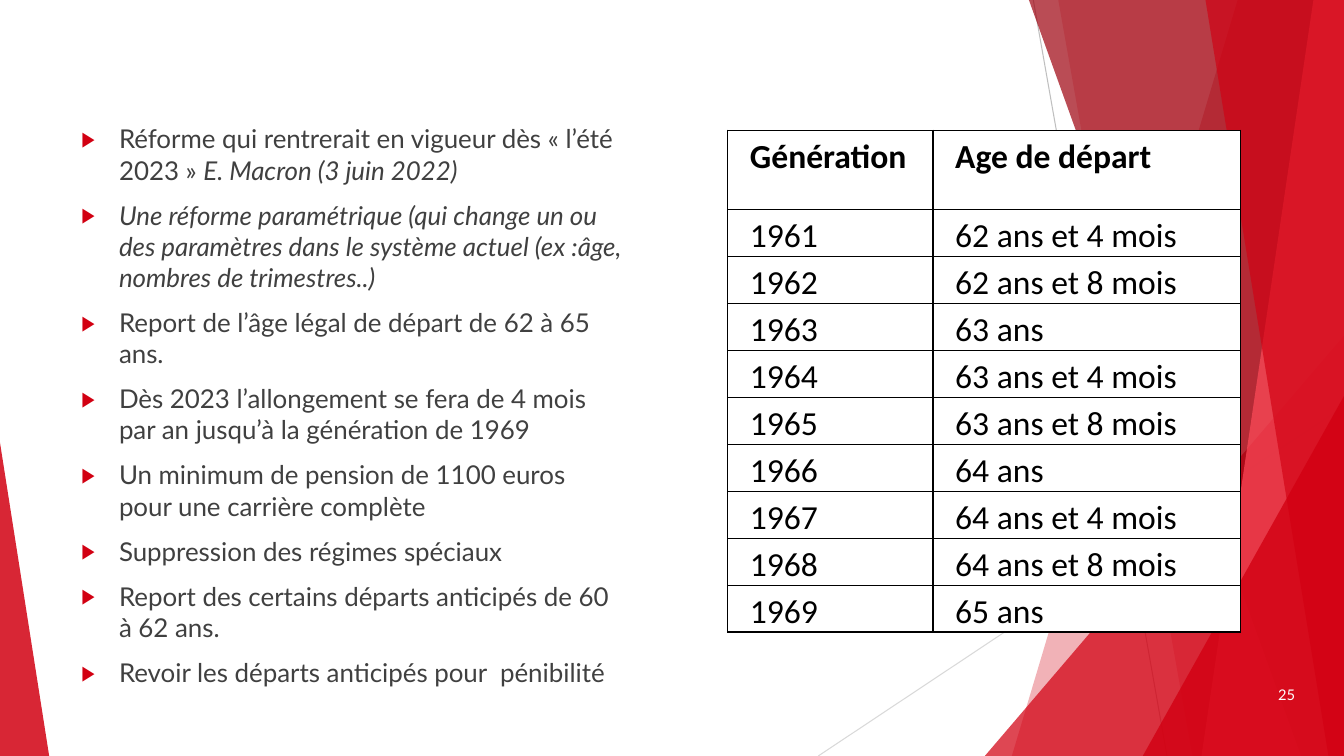
from collections import namedtuple

from lxml.etree import SubElement
from pptx import Presentation
from pptx.dml.color import RGBColor
from pptx.enum.shapes import MSO_CONNECTOR, MSO_SHAPE
from pptx.enum.text import MSO_ANCHOR, PP_ALIGN
from pptx.oxml.ns import qn
from pptx.util import Cm, Pt

Box = namedtuple("Box", "left top width height")

COLORS = {
    "red": "D20012",
    "dark_red": "9E000D",
    "light_red": "FF4B5A",
    "grey": "BFBFBF",
    "light_grey": "D9D9D9",
    "text": "404040",
    "black": "000000",
    "white": "FFFFFF",
}

BULLETS = [
    [("Réforme qui rentrerait en vigueur dès « l’été 2023 » ", False),
     ("E. Macron (3 juin 2022)", True)],
    [("Une réforme paramétrique (qui change un ou des paramètres dans le "
      "système actuel (ex :âge, nombres de trimestres..)", True)],
    [("Report de l’âge légal de départ de 62 à 65 ans.", False)],
    [("Dès 2023 l’allongement se fera de 4 mois par an jusqu’à la "
      "génération de 1969", False)],
    [("Un minimum de pension de 1100 euros pour une carrière complète", False)],
    [("Suppression des régimes spéciaux", False)],
    [("Report des certains départs anticipés de 60 à 62 ans.", False)],
    [("Revoir les départs anticipés pour  pénibilité", False)],
]

AGES = [
    ("Génération", "Age de départ"),
    ("1961", "62 ans et 4 mois"),
    ("1962", "62 ans et 8 mois"),
    ("1963", "63 ans"),
    ("1964", "63 ans et 4 mois"),
    ("1965", "63 ans et 8 mois"),
    ("1966", "64 ans"),
    ("1967", "64 ans et 4 mois"),
    ("1968", "64 ans et 8 mois"),
    ("1969", "65 ans"),
]


def rgb(name):
    return RGBColor.from_string(COLORS[name])


def lengths(box):
    return [Cm(value) for value in box]


def add_span(para, text, *, size, color, font="Lato", bold=False, italic=False):
    span = para.add_run()
    span.text = text
    span.font.name = font
    span.font.size = Pt(size)
    span.font.bold = bold
    span.font.italic = italic
    span.font.color.rgb = rgb(color)


def paint(shape, color, opacity):
    shape.shadow.inherit = False
    shape.line.fill.background()
    shape.fill.solid()
    shape.fill.fore_color.rgb = rgb(color)
    tint = shape.fill._xPr.find(".//" + qn("a:srgbClr"))
    SubElement(tint, qn("a:alpha"), val=str(opacity * 1000))


def add_ray(page, start, end, color):
    ray = page.shapes.add_connector(
        MSO_CONNECTOR.STRAIGHT, *lengths(start), *lengths(end))
    ray.line.color.rgb = rgb(color)
    ray.line.width = Pt(0.75)
    SubElement(ray._element.spPr, qn("a:effectLst"))


def add_band(page, box, top_x, bottom_x, color, opacity):
    right, bottom = box.left + box.width, box.top + box.height
    outline = page.shapes.build_freeform(Cm(top_x), Cm(box.top))
    outline.add_line_segments([
        lengths((right, box.top)),
        lengths((right, bottom)),
        lengths((bottom_x, bottom)),
    ], close=True)
    paint(outline.convert_to_shape(), color, opacity)


def add_corner(page, box, apex, opacity):
    corner = page.shapes.add_shape(MSO_SHAPE.ISOSCELES_TRIANGLE, *lengths(box))
    corner.adjustments[0] = apex
    paint(corner, "red", opacity)


def add_right_corner(page, box, width, height, opacity):
    left = box.left + box.width - width
    top = box.top + box.height - height
    add_corner(page, Box(left, top, width, height), 1, opacity)


def add_backdrop(page, box):
    right, bottom = box.left + box.width, box.top + box.height
    add_ray(page, (26.04, box.top), (29.41, bottom), "grey")
    add_ray(page, (right, 10.24), (20.62, bottom), "light_grey")
    add_band(page, box, 31.19, 25.5, "red", 30)
    add_band(page, box, 26.67, 30.05, "red", 20)
    add_right_corner(page, box, 9.05, 10.59, 72)
    add_band(page, box, 25.93, 32.79, "dark_red", 70)
    add_band(page, box, 33.1, 30.28, "light_red", 70)
    add_band(page, box, 30.38, 33.48, "red", 65)
    add_right_corner(page, box, 5.07, 9.07, 80)
    add_corner(page, Box(box.left, bottom - 7.9, 1.24, 7.9), 0, 85)


def set_bullet(para):
    props = para._p.get_or_add_pPr()
    props.set("marL", str(Cm(0.95)))
    props.set("indent", str(-Cm(0.95)))
    color = SubElement(props, qn("a:buClr"))
    SubElement(color, qn("a:srgbClr"), val=COLORS["red"])
    SubElement(props, qn("a:buSzPct"), val="80000")
    SubElement(props, qn("a:buFont"), typeface="Lato")
    SubElement(props, qn("a:buChar"), char="▶")


def add_bullets(page, box):
    frame = page.shapes.add_textbox(*lengths(box)).text_frame
    frame.word_wrap = True
    frame.margin_top = Cm(1.25)
    for index, parts in enumerate(BULLETS):
        para = frame.add_paragraph() if index else frame.paragraphs[0]
        para.space_before = Pt(10 if index else 0)
        set_bullet(para)
        for text, italic in parts:
            add_span(para, text, size=18.5, color="text", italic=italic)


def set_borders(cell):
    props = cell._tc.get_or_add_tcPr()
    for position, side in enumerate(("a:lnL", "a:lnR", "a:lnT", "a:lnB")):
        border = props.makeelement(qn(side), {"w": str(Pt(1))})
        fill = SubElement(border, qn("a:solidFill"))
        SubElement(fill, qn("a:srgbClr"), val=COLORS["black"])
        props.insert(position, border)


def add_ages(page, box):
    table = page.shapes.add_table(len(AGES), 2, *lengths(box)).table
    for column, share in zip(table.columns, (0.4, 0.6)):
        column.width = Cm(box.width * share)
    header = 2
    for index, values in enumerate(AGES):
        height = (box.height - header) / (len(AGES) - 1) if index else header
        table.rows[index].height = Cm(height)
        for cell, text in zip(table.rows[index].cells, values):
            cell.margin_left = cell.margin_right = Cm(0.56)
            cell.margin_top, cell.margin_bottom = Cm(0.08), 0
            cell.fill.solid()
            cell.fill.fore_color.rgb = rgb("white")
            set_borders(cell)
            para = cell.text_frame.paragraphs[0]
            para.line_spacing = 1.07
            para.space_after = Pt(8)
            add_span(para, text, size=24, color="black", font="Calibri",
                     bold=index == 0)


def add_page_number(page, box):
    frame = page.shapes.add_textbox(*lengths(box)).text_frame
    frame.word_wrap = True
    frame.vertical_anchor = MSO_ANCHOR.MIDDLE
    para = frame.paragraphs[0]
    para.alignment = PP_ALIGN.RIGHT
    add_span(para, "25", size=10.5, color="white")


def main():
    deck = Presentation()
    deck.slide_width, deck.slide_height = Cm(33.87), Cm(19.05)
    page = deck.slides.add_slide(deck.slide_layouts[6])
    add_backdrop(page, Box(0, 0, 33.87, 19.05))
    add_bullets(page, Box(1.8, 1.85, 14.12, 16.46))
    add_ages(page, Box(18.34, 3.28, 12.93, 12.65))
    add_page_number(page, Box(30.99, 16.99, 1.9, 1.02))
    deck.save("out.pptx")


if __name__ == "__main__":
    main()
